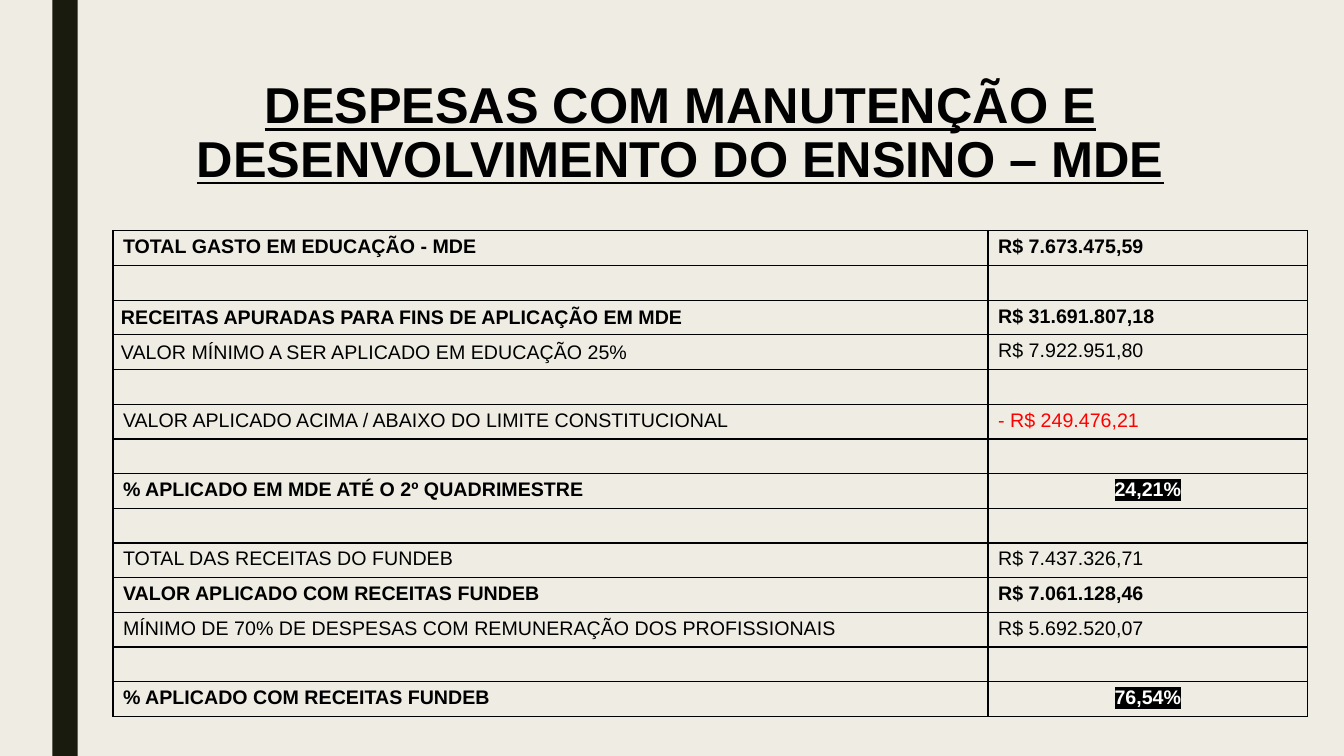
from dataclasses import dataclass

from lxml.etree import SubElement
from pptx import Presentation
from pptx.dml.color import RGBColor
from pptx.enum.shapes import MSO_SHAPE as Shape
from pptx.enum.text import MSO_ANCHOR as Anchor, PP_ALIGN as Align
from pptx.oxml.ns import qn
from pptx.table import _Cell as Cell
from pptx.util import Inches, Pt

BLACK, WHITE, RED = "000000", "FFFFFF", "FF0000"
CREAM, OLIVE = "EFEDE3", "191B0E"
FONT = "Arial"
BODY_SIZE = 14
ROW_HEIGHT = 4.82 / 14


@dataclass
class Expense:
    label: str = ""
    amount: str = ""
    bold: bool = False
    color: str = BLACK
    inset: bool = False
    percentage: bool = False


EXPENSES = [
    Expense("TOTAL GASTO EM EDUCAÇÃO - MDE", "R$ 7.673.475,59", bold=True),
    Expense(),
    Expense("RECEITAS APURADAS PARA FINS DE APLICAÇÃO EM MDE", "R$ 31.691.807,18",
            bold=True, inset=True),
    Expense("VALOR MÍNIMO A SER APLICADO EM EDUCAÇÃO 25%", "R$ 7.922.951,80", inset=True),
    Expense(),
    Expense("VALOR APLICADO ACIMA / ABAIXO DO LIMITE CONSTITUCIONAL", "- R$ 249.476,21",
            color=RED),
    Expense(),
    Expense("% APLICADO EM MDE ATÉ O 2º QUADRIMESTRE", "24,21%", bold=True,
            color=WHITE, percentage=True),
    Expense(),
    Expense("TOTAL DAS RECEITAS DO FUNDEB", "R$ 7.437.326,71"),
    Expense("VALOR APLICADO COM RECEITAS FUNDEB", "R$ 7.061.128,46", bold=True),
    Expense("MÍNIMO DE 70% DE DESPESAS COM REMUNERAÇÃO DOS PROFISSIONAIS", "R$ 5.692.520,07"),
    Expense(),
    Expense("% APLICADO COM RECEITAS FUNDEB", "76,54%", bold=True,
            color=WHITE, percentage=True),
]


def rgb(color: str) -> RGBColor:
    return RGBColor.from_string(color)


def write(frame, text: str, size: float = BODY_SIZE, color: str = BLACK, bold: bool = False,
          underline: bool = False, align: Align = Align.LEFT, spacing: float = 1.0,
          highlight: str = "") -> None:
    paragraph = frame.paragraphs[0]
    paragraph.alignment = align
    paragraph.line_spacing = spacing
    if not text:
        # An empty row keeps its height through the size of the paragraph end
        SubElement(paragraph._p, qn("a:endParaRPr"), sz=str(size * 100))
        return
    run = paragraph.add_run()
    run.text = text
    font = run.font
    font.name, font.size, font.bold, font.underline = FONT, Pt(size), bold, underline
    font.color.rgb = rgb(color)
    if highlight:
        properties = run._r.get_or_add_rPr()
        mark = SubElement(properties, qn("a:highlight"))
        SubElement(mark, qn("a:srgbClr"), val=highlight)
        properties.find(qn("a:solidFill")).addnext(mark)


def add_borders(cell: Cell, color: str = BLACK, width: float = 1) -> None:
    properties = cell._tc.get_or_add_tcPr()
    for position, side in enumerate(("lnL", "lnR", "lnT", "lnB")):
        line = SubElement(properties, qn(f"a:{side}"), w=str(Pt(width)))
        fill = SubElement(line, qn("a:solidFill"))
        SubElement(fill, qn("a:srgbClr"), val=color)
        properties.insert(position, line)


def fill_row(label: Cell, amount: Cell, expense: Expense) -> None:
    for cell in (label, amount):
        cell.fill.background()
        add_borders(cell)
    if expense.inset:
        label.vertical_anchor = Anchor.MIDDLE
        label.margin_left = label.margin_right = Inches(0.08)
        label.margin_top = label.margin_bottom = Inches(0.04)
    write(label.text_frame, expense.label, bold=expense.bold)
    write(amount.text_frame, expense.amount, bold=expense.bold, color=expense.color,
          align=Align.CENTER if expense.percentage else Align.LEFT,
          highlight=BLACK if expense.percentage else "")


def main() -> None:
    deck = Presentation()
    deck.slide_width, deck.slide_height = Inches(13.33), Inches(7.5)
    slide = deck.slides.add_slide(deck.slide_layouts[5])
    slide.background.fill.solid()
    slide.background.fill.fore_color.rgb = rgb(CREAM)

    # Side bar
    side_bar = slide.shapes.add_shape(Shape.RECTANGLE, Inches(0.52), 0,
                                      Inches(0.25), Inches(7.5))
    side_bar.shadow.inherit = False
    side_bar.fill.solid()
    side_bar.fill.fore_color.rgb = rgb(OLIVE)
    side_bar.line.fill.background()

    # Title
    heading = slide.shapes.title
    heading.left, heading.top = Inches(1.5), Inches(0.75)
    heading.width, heading.height = Inches(10.5), Inches(1.62)
    heading.text_frame.vertical_anchor = Anchor.TOP
    write(heading.text_frame, "DESPESAS COM MANUTENÇÃO E DESENVOLVIMENTO DO ENSINO – MDE",
          size=36, bold=True, underline=True, align=Align.CENTER, spacing=0.89)

    # Expense table
    expenses = slide.shapes.add_table(len(EXPENSES), 2, Inches(1.12), Inches(2.29),
                                      Inches(11.85), Inches(4.82)).table
    expenses.first_row = expenses.horz_banding = False
    for column, width in zip(expenses.columns, (8.68, 3.17)):
        column.width = Inches(width)
    for row, expense in zip(expenses.rows, EXPENSES):
        row.height = Inches(ROW_HEIGHT)
        fill_row(row.cells[0], row.cells[1], expense)

    deck.save("out.pptx")


if __name__ == "__main__":
    main()
